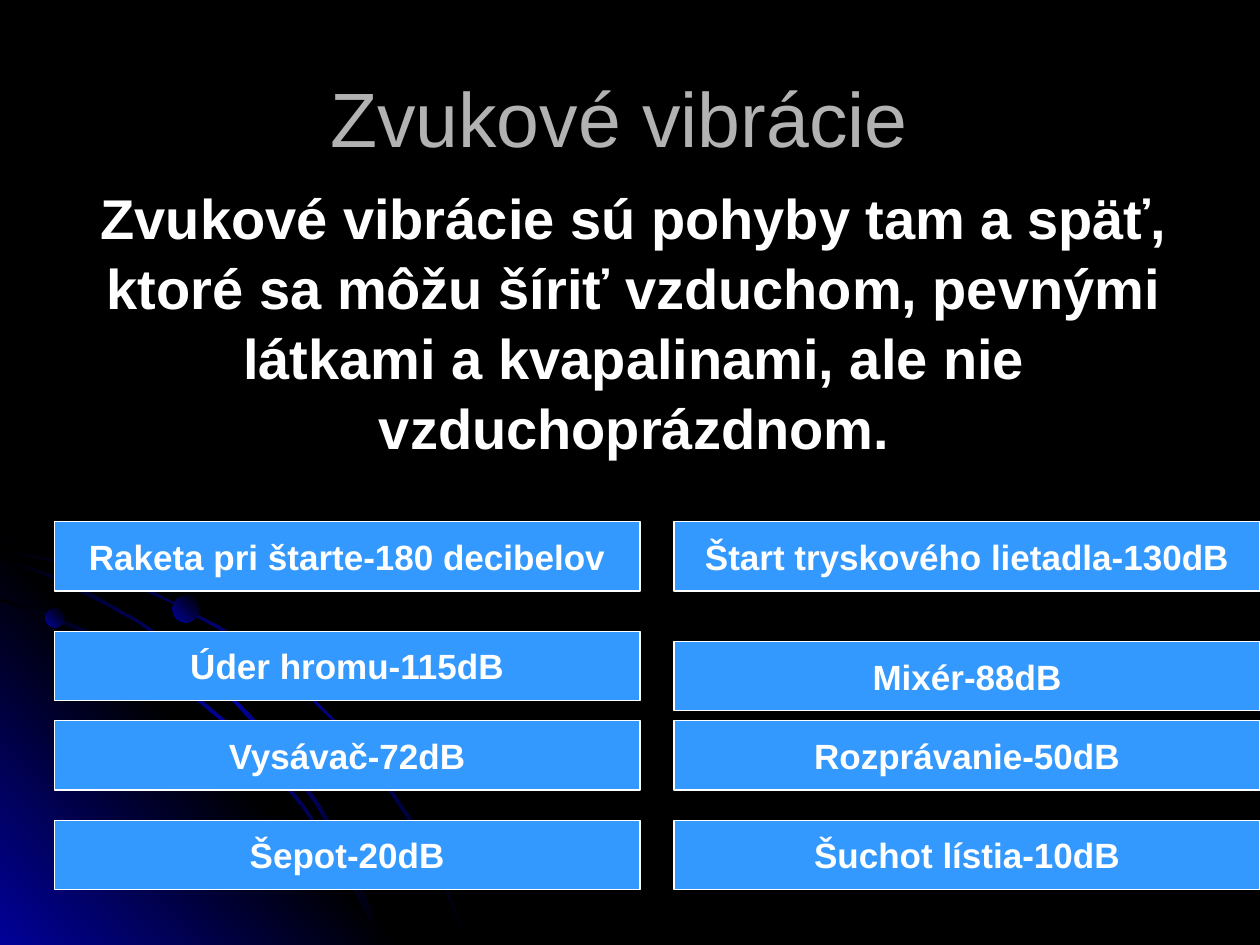
from dataclasses import dataclass

from lxml.etree import SubElement
from pptx import Presentation
from pptx.dml.color import RGBColor
from pptx.enum.shapes import MSO_SHAPE as Preset
from pptx.enum.text import MSO_ANCHOR as Anchor, PP_ALIGN as Align
from pptx.oxml.ns import qn
from pptx.shapes.autoshape import Shape
from pptx.slide import Slide
from pptx.util import Inches, Pt

COLOURS = {"black": "000000", "blue": "010199", "box": "3399FF",
           "white": "FFFFFF", "title": "B2B2B2"}
FONT = "Arial"
UNIT = Inches(0.01)
COLUMNS = (0.43, 5.35)
ARC_STOPS = ("black", "blue", "black")


@dataclass
class Swoosh:
    points: list[tuple[int, int]]
    stops: tuple[str, ...]
    angle: int


@dataclass
class Ball:
    left: float
    top: float
    size: float


@dataclass
class SoundLevel:
    text: str
    column: int
    top: float


SWOOSHES = [
    Swoosh([(57, 447), (28, 441), (0, 435), (0, 438), (28, 443), (56, 449),
            (97, 461), (135, 478), (173, 499), (208, 523), (241, 549),
            (271, 579), (298, 612), (323, 649), (337, 673), (350, 698),
            (360, 723), (370, 749), (372, 749), (362, 723), (352, 698),
            (339, 673), (325, 648), (300, 611), (272, 578), (242, 548),
            (209, 521), (174, 497), (136, 477), (98, 459)], ARC_STOPS, 45),
    Swoosh([(322, 750), (0, 750), (0, 427)], ("blue", "black", "blue"), 315),
    Swoosh([(285, 714), (294, 732), (301, 749), (303, 749), (296, 730),
            (286, 712), (266, 676), (242, 640), (215, 606), (184, 576),
            (152, 549), (117, 526), (79, 505), (41, 488), (0, 475),
            (0, 477), (39, 490), (77, 507), (115, 528), (150, 551),
            (183, 578), (213, 608), (240, 641), (265, 677)], ARC_STOPS, 45),
    Swoosh([(0, 442), (0, 444), (36, 457), (74, 475), (109, 494), (142, 518),
            (173, 544), (202, 575), (227, 605), (252, 641), (267, 667),
            (280, 694), (292, 722), (301, 749), (303, 749), (294, 720),
            (282, 693), (269, 665), (254, 639), (229, 603), (204, 573),
            (175, 543), (144, 516), (111, 493), (76, 473), (39, 455)],
           ARC_STOPS, 45),
]

BALLS = [Ball(0.36, 4.83, 0.15), Ball(1.37, 4.73, 0.21)]

SOUND_LEVELS = [
    SoundLevel("Raketa pri štarte-180 decibelov", 0, 4.14),
    SoundLevel("Štart tryskového lietadla-130dB", 1, 4.14),
    SoundLevel("Úder hromu-115dB", 0, 5.01),
    SoundLevel("Mixér-88dB", 1, 5.09),
    SoundLevel("Vysávač-72dB", 0, 5.72),
    SoundLevel("Rozprávanie-50dB", 1, 5.72),
    SoundLevel("Šepot-20dB", 0, 6.51),
    SoundLevel("Šuchot lístia-10dB", 1, 6.51),
]


def colour(name: str) -> RGBColor:
    return RGBColor.from_string(COLOURS[name])


def fill_gradient(shape: Shape, stops: tuple[str, ...], angle: int) -> None:
    shape.shadow.inherit = False
    shape.line.fill.background()
    shape.fill.gradient()
    shape.fill.gradient_angle = 360 - angle
    stop_list = shape._element.spPr.find(qn("a:gradFill")).find(qn("a:gsLst"))
    for stop in list(stop_list):
        stop_list.remove(stop)
    for index, name in enumerate(stops):
        position = 100000 * index // (len(stops) - 1)
        stop = SubElement(stop_list, qn("a:gs"), pos=str(position))
        SubElement(stop, qn("a:srgbClr"), val=COLOURS[name])


def draw_swoosh(slide: Slide, swoosh: Swoosh) -> None:
    start, *rest = swoosh.points
    builder = slide.shapes.build_freeform(*start, scale=UNIT)
    builder.add_line_segments(rest, close=True)
    fill_gradient(builder.convert_to_shape(), swoosh.stops, swoosh.angle)


def draw_ball(slide: Slide, ball: Ball) -> None:
    shape = slide.shapes.add_shape(Preset.OVAL, Inches(ball.left), Inches(ball.top),
                                   Inches(ball.size), Inches(ball.size))
    fill_gradient(shape, ("blue", "black"), 315)


def write_text(shape: Shape, text: str, size: int, colour_name: str, bold: bool,
               anchor: Anchor, wrap: bool, line_spacing: float = 1.0) -> None:
    frame = shape.text_frame
    frame.word_wrap = wrap
    frame.vertical_anchor = anchor
    paragraph = frame.paragraphs[0]
    paragraph.text = text
    paragraph.alignment = Align.CENTER
    paragraph.line_spacing = line_spacing
    paragraph.font.name = FONT
    paragraph.font.size = Pt(size)
    paragraph.font.bold = bold
    paragraph.font.color.rgb = colour(colour_name)


def draw_sound_level(slide: Slide, level: SoundLevel) -> None:
    shape = slide.shapes.add_shape(Preset.RECTANGLE, Inches(COLUMNS[level.column]),
                                   Inches(level.top), Inches(4.65), Inches(0.55))
    shape.shadow.inherit = False
    shape.fill.solid()
    shape.fill.fore_color.rgb = colour("box")
    shape.line.color.rgb = colour("white")
    shape.line.width = Pt(0.75)
    write_text(shape, level.text, 20, "white", True, Anchor.MIDDLE, False)


def main() -> None:
    presentation = Presentation()
    presentation.slide_width = Inches(10)
    presentation.slide_height = Inches(7.5)
    slide = presentation.slides.add_slide(presentation.slide_layouts[6])
    slide.background.fill.solid()
    slide.background.fill.fore_color.rgb = colour("black")

    for swoosh in SWOOSHES:
        draw_swoosh(slide, swoosh)
    for ball in BALLS:
        draw_ball(slide, ball)

    title = slide.shapes.add_textbox(Inches(0.5), Inches(0.3), Inches(9), Inches(1.25))
    write_text(title, "Zvukové vibrácie ", 44, "title", False, Anchor.MIDDLE, True)

    for level in SOUND_LEVELS:
        draw_sound_level(slide, level)

    definition = slide.shapes.add_textbox(Inches(0.43), Inches(1.39),
                                          Inches(9.21), Inches(2.23))
    write_text(definition,
               "Zvukové vibrácie sú pohyby tam a späť, ktoré sa môžu šíriť vzduchom, "
               "pevnými látkami a kvapalinami, ale nie vzduchoprázdnom.",
               32, "white", True, Anchor.TOP, True, 1.04)

    presentation.save("out.pptx")


if __name__ == "__main__":
    main()
